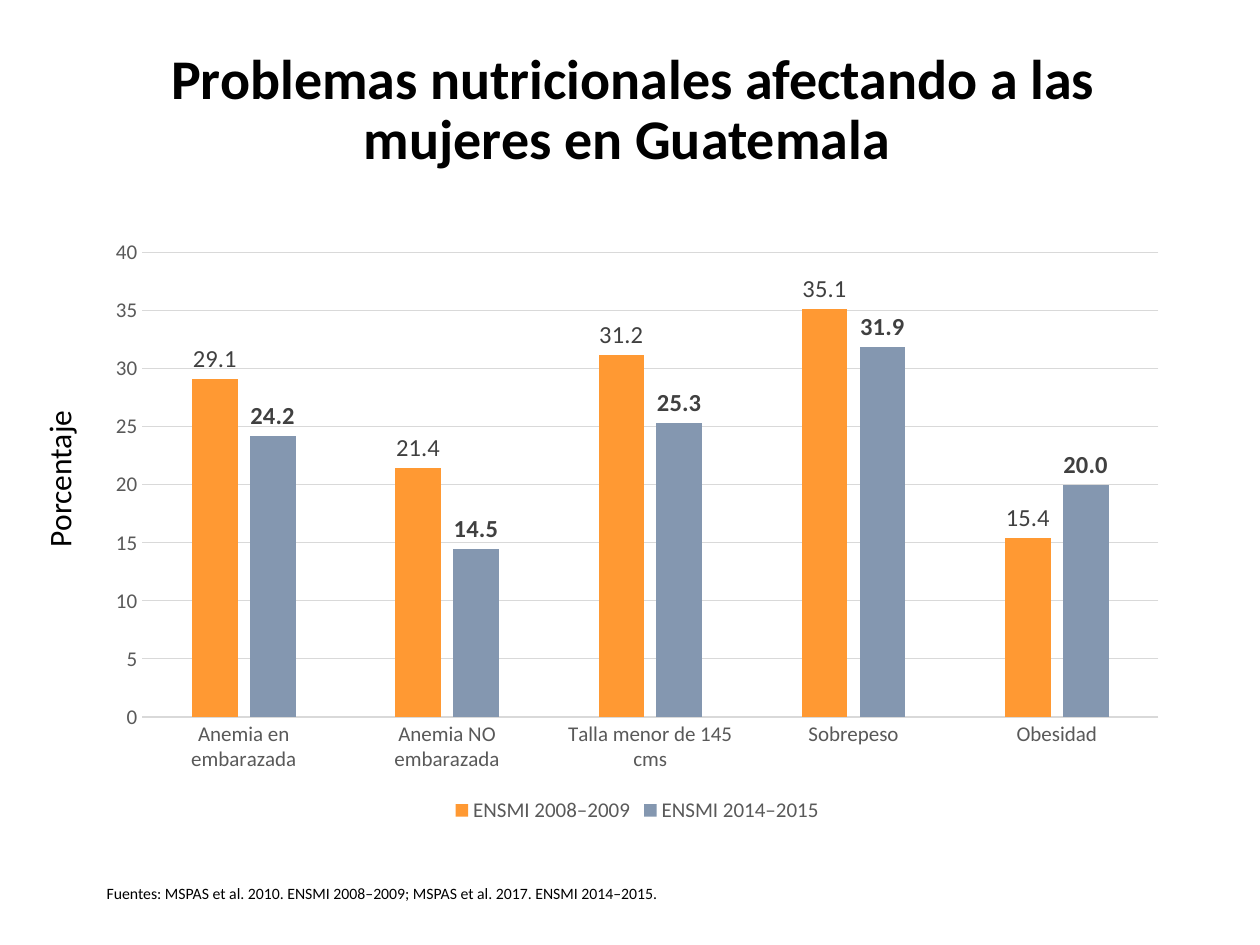
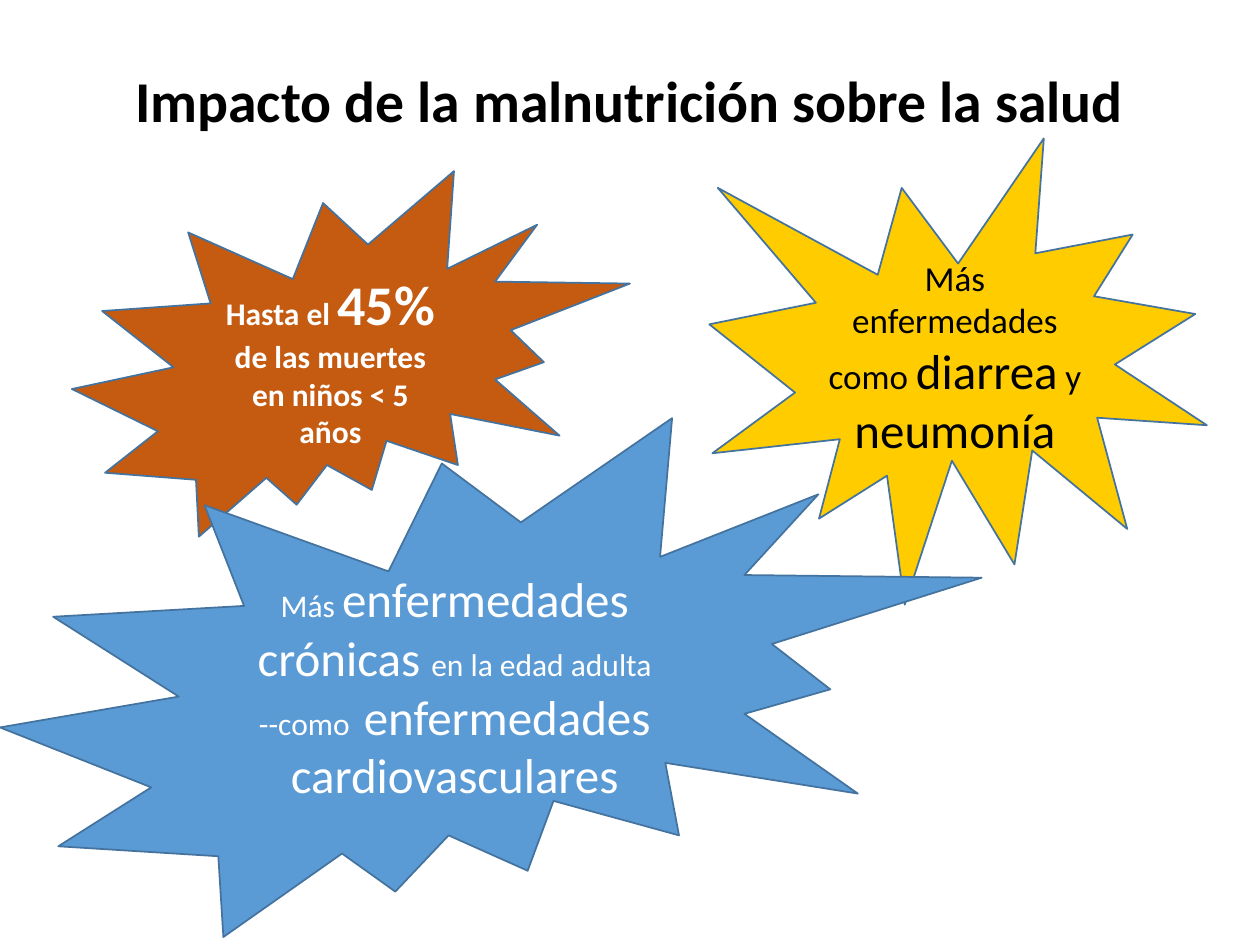
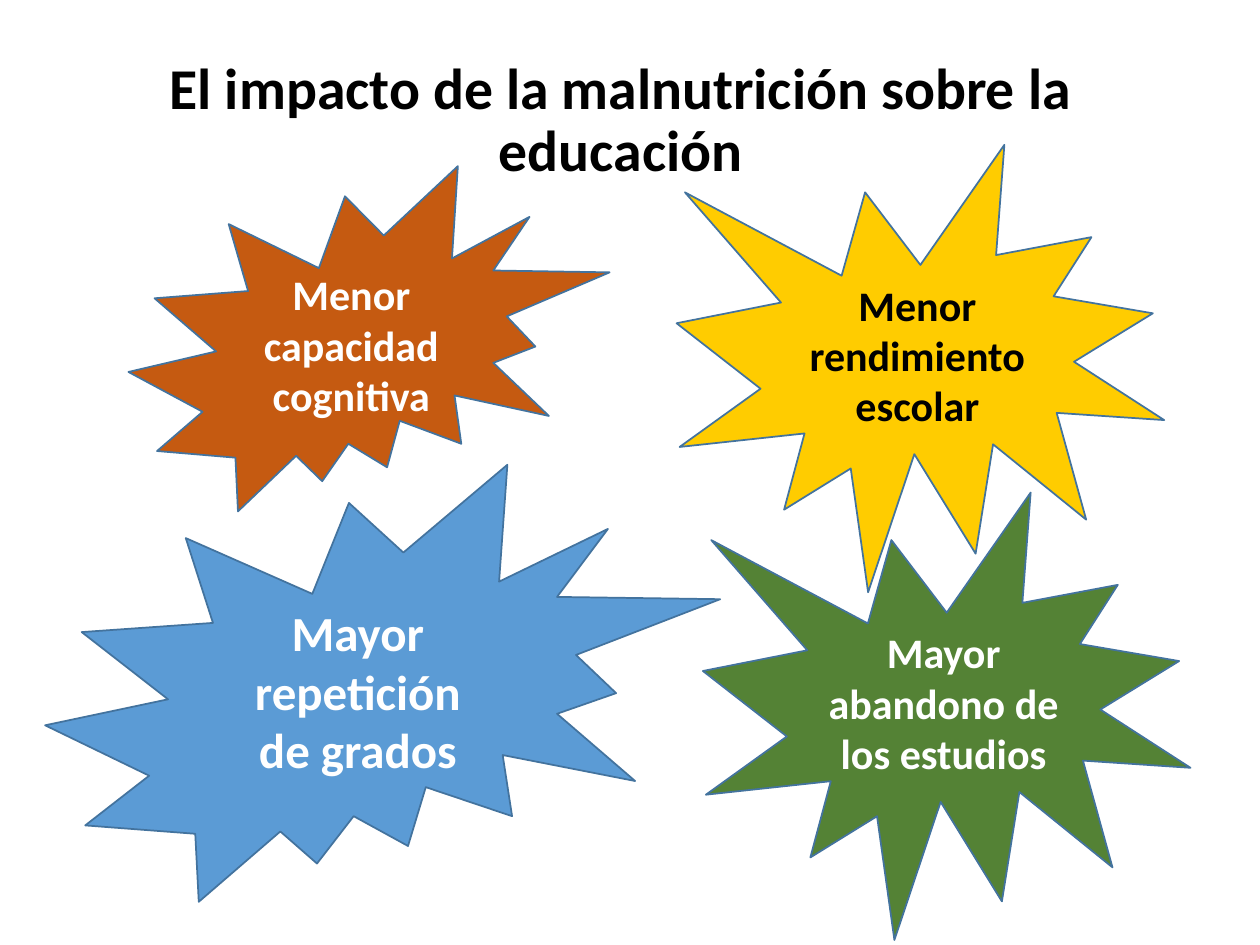
from pptx import Presentation
from pptx.chart.data import CategoryChartData
from pptx.dml.color import RGBColor
from pptx.enum.chart import XL_CHART_TYPE as ChartType
from pptx.enum.chart import XL_LABEL_POSITION as LabelPosition
from pptx.enum.chart import XL_LEGEND_POSITION as LegendPosition
from pptx.enum.chart import XL_TICK_MARK as TickMark
from pptx.enum.shapes import MSO_SHAPE as Shape
from pptx.enum.text import MSO_ANCHOR as Anchor
from pptx.enum.text import PP_ALIGN as Align
from pptx.util import Cm, Pt

COLORS = {
    "black": "000000",
    "white": "FFFFFF",
    "axis": "595959",
    "label": "404040",
    "grid": "D9D9D9",
    "outline": "43739E",
    "orange": "FF9933",
    "slate": "8497B0",
    "rust": "C55A11",
    "yellow": "FFCC00",
    "blue": "5B9BD5",
    "green": "548235",
}


def color(name):
    return RGBColor.from_string(COLORS[name])


def apply(target, formats):
    for attribute, value in formats.items():
        setattr(target, attribute, value)


class Deck:
    font = "Calibri"

    def __init__(self):
        self.presentation = Presentation()
        apply(self.presentation, {"slide_width": Cm(25.4), "slide_height": Cm(19.05)})
        self.slide = None

    def new_slide(self):
        self.slide = self.presentation.slides.add_slide(self.presentation.slide_layouts[6])

    def style_font(self, font, size, tone="black", bold=False):
        apply(font, {"name": self.font, "size": Pt(size), "bold": bold})
        font.color.rgb = color(tone)

    def style_line(self, line, tone, width):
        line.color.rgb = color(tone)
        line.width = Pt(width)

    def fill_text(self, frame, runs, tone="black", bold=False, align=Align.LEFT,
                  anchor=Anchor.TOP, wrap=True, spacing=1.0):
        apply(frame, {"word_wrap": wrap, "vertical_anchor": anchor})
        paragraph = frame.paragraphs[0]
        apply(paragraph, {"alignment": align, "line_spacing": spacing})
        for words, size in runs:
            run = paragraph.add_run()
            run.text = words
            self.style_font(run.font, size, tone, bold)

    def text(self, box, runs, rotation=0, **formats):
        label = self.slide.shapes.add_textbox(*map(Cm, box))
        label.rotation = rotation
        self.fill_text(label.text_frame, runs, **formats)

    def title(self, box, words, size=33):
        self.text(box, [(words, size)], bold=True, align=Align.CENTER,
                  anchor=Anchor.MIDDLE, spacing=0.9)

    def burst(self, outline, box, fill, runs, tone="white", bold=True):
        star = self.slide.shapes.add_shape(outline, *map(Cm, box))
        star.shadow.inherit = False
        star.fill.solid()
        star.fill.fore_color.rgb = color(fill)
        self.style_line(star.line, "outline", 1)
        self.fill_text(star.text_frame, runs, tone, bold, Align.CENTER, Anchor.MIDDLE)

    def columns(self, box, categories, surveys):
        data = CategoryChartData()
        data.categories = categories
        for survey, values, *_ in surveys:
            data.add_series(survey, values)
        chart = self.slide.shapes.add_chart(
            ChartType.COLUMN_CLUSTERED, *map(Cm, box), data).chart
        apply(chart, {"has_title": False, "has_legend": True})
        self.style_font(chart.font, 10)
        apply(chart.legend, {"position": LegendPosition.BOTTOM, "include_in_layout": False})
        self.style_font(chart.legend.font, 12, "axis")

        for axis in (chart.category_axis, chart.value_axis):
            apply(axis, {"major_tick_mark": TickMark.NONE, "minor_tick_mark": TickMark.NONE})
            self.style_font(axis.tick_labels.font, 12, "axis")
        self.style_line(chart.category_axis.format.line, "grid", 0.75)
        percent = chart.value_axis
        apply(percent, {"minimum_scale": 0, "maximum_scale": 40, "major_unit": 5,
                        "has_major_gridlines": True})
        self.style_line(percent.major_gridlines.format.line, "grid", 0.75)
        percent.format.line.fill.background()

        plot = chart.plots[0]
        apply(plot, {"gap_width": 219, "overlap": -27, "vary_by_categories": False})
        for series, (_, _, fill, bold) in zip(plot.series, surveys):
            series.format.fill.solid()
            series.format.fill.fore_color.rgb = color(fill)
            series.invert_if_negative = False
            labels = series.data_labels
            apply(labels, {"show_value": True, "number_format": "0.0",
                           "number_format_is_linked": False,
                           "position": LabelPosition.OUTSIDE_END})
            self.style_font(labels.font, 14, "label", bold)


def problems(deck):
    deck.new_slide()
    deck.title((1.9, 0.89, 21.74, 2.72),
               "Problemas nutricionales afectando a las mujeres en Guatemala ", 32)
    deck.columns(
        (1.9, 4.6, 21.89, 12.09),
        ["Anemia en embarazada", "Anemia NO embarazada", "Talla menor de 145 cms",
         "Sobrepeso", "Obesidad"],
        [("ENSMI 2008–2009", (29.1, 21.4, 31.2, 35.1, 15.4), "orange", False),
         ("ENSMI 2014–2015", (24.2, 14.5, 25.3, 31.9, 20), "slate", True)])
    deck.text(
        (1.9, 17.7, 11.89, 0.64),
        [("Fuentes: MSPAS et al. 2010. ENSMI 2008–2009; "
          "MSPAS et al. 2017. ENSMI 2014–2015.", 9)], wrap=False)
    deck.text((-2.01, 7.57, 6.4, 1.02), [("Porcentaje", 18)], rotation=270)


def health(deck):
    deck.new_slide()
    deck.title((1.75, 1.02, 21.89, 2.16), "Impacto de la malnutrición sobre la salud")
    deck.burst(Shape.EXPLOSION2, (1.45, 3.45, 11.25, 7.37), "rust",
               [("Hasta el ", 18), ("45% ", 32), ("de las muertes en niños < 5 años", 18)])
    deck.burst(Shape.EXPLOSION1, (14.3, 2.79, 10.03, 9.4), "yellow",
               [("Más enfermedades como ", 20), ("diarrea", 28), (" y ", 20),
                ("neumonía", 28)], "black", False)
    deck.burst(Shape.EXPLOSION2, (0, 8.43, 19.79, 10.46), "blue",
               [("Más ", 18), ("enfermedades crónicas ", 28),
                ("en la edad adulta --como  ", 18),
                ("enfermedades cardiovasculares", 28)], bold=False)


def education(deck):
    deck.new_slide()
    deck.title((1.57, 0.61, 21.89, 3.68), "El impacto de la malnutrición sobre la educación")
    effects = [
        (Shape.EXPLOSION2, (2.59, 3.35, 9.7, 6.96), "rust",
         "Menor capacidad cognitiva", 24, "white"),
        (Shape.EXPLOSION1, (13.64, 2.92, 9.83, 9.02), "yellow",
         "Menor rendimiento escolar", 24, "black"),
        (Shape.EXPLOSION2, (0.91, 9.37, 13.61, 8.81), "blue",
         "Mayor repetición de grados", 28, "white"),
        (Shape.EXPLOSION1, (14.17, 9.93, 9.83, 9.02), "green",
         "Mayor abandono de los estudios", 24, "white"),
    ]
    for outline, box, fill, effect, size, tone in effects:
        deck.burst(outline, box, fill, [(effect, size)], tone)


def main():
    deck = Deck()
    for build in (problems, health, education):
        build(deck)
    deck.presentation.save("out.pptx")


if __name__ == "__main__":
    main()
